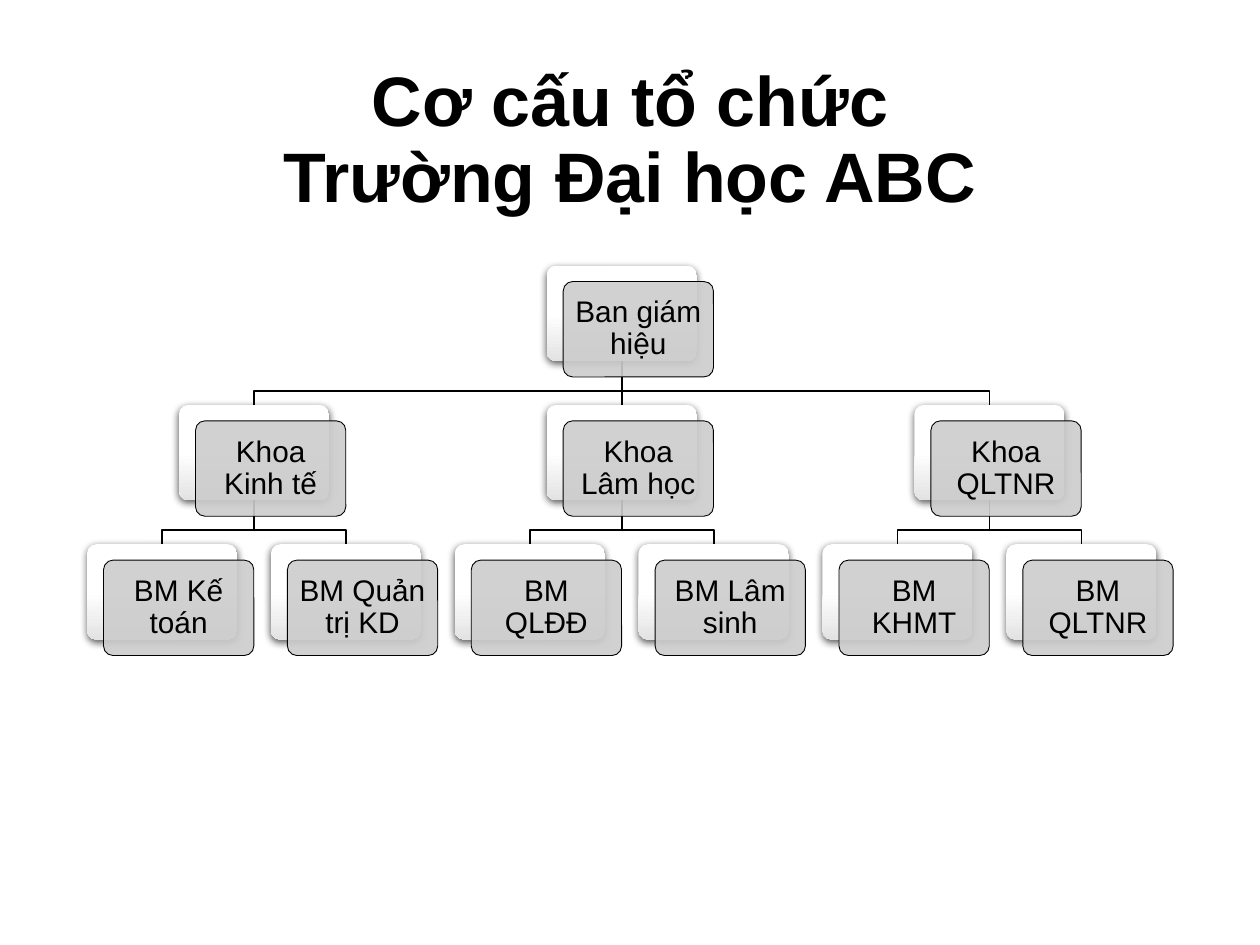
from pptx import Presentation
from pptx import util as u
from pptx.dml import color
from pptx.enum import shapes, text
from pptx.oxml import ns, parse_xml

Pt = u.Pt
CARD_W, CARD_H = 85.9, 54.55
SHIFT_X, SHIFT_Y = 9.5, 9.1
LEFT, TOP = 49.7, 151.8
LEAF_STEP, LEVEL_STEP = 105.06, 79.6
BEND_GAP = 8

BOARD = "Ban giám hiệu"
FACULTIES = {
    "Khoa Kinh tế": ["BM Kế toán", "BM Quản trị KD"],
    "Khoa Lâm học": ["BM QLĐĐ", "BM Lâm sinh"],
    "Khoa QLTNR": ["BM KHMT", "BM QLTNR"],
}


def rgb(value):
    return color.RGBColor.from_string(value)


def apply(target, values):
    for key, value in values.items():
        setattr(target, key, value)


class OrgChart:
    """Draws the title, links and cards of an organisation chart on one slide."""

    ink, card, shade, paper = "000000", "CCCCCC", "E3E3E3", "FFFFFF"
    font = "Arial"
    inset = {f"margin_{side}": Pt(5) for side in ("left", "right", "top", "bottom")}
    frame = {"word_wrap": True, "vertical_anchor": text.MSO_ANCHOR.MIDDLE}
    line_format = {"alignment": text.PP_ALIGN.CENTER, "line_spacing": 0.9}

    def __init__(self, slide):
        self.slide = slide

    def label(self, holder, words, size, bold=False, **margins):
        frame = holder.text_frame
        frame.text = words
        apply(frame, {**self.frame, **margins})
        line = frame.paragraphs[0]
        apply(line, self.line_format)
        for run in line.runs:
            apply(run.font, {"name": self.font, "size": Pt(size), "bold": bold})
            run.font.color.rgb = rgb(self.ink)

    def title(self, words, left, top, width, height):
        heading = self.slide.shapes.title
        apply(heading, {"left": Pt(left), "top": Pt(top),
                        "width": Pt(width), "height": Pt(height)})
        self.label(heading, words, 40, bold=True)
        heading.text_frame.auto_size = text.MSO_AUTO_SIZE.NONE

    def link(self, parent, child):
        (x, top), (end_x, end_y) = parent, child
        start_y, bend = top + CARD_H, end_y - BEND_GAP
        if x == end_x:
            branch = self.slide.shapes.add_connector(
                shapes.MSO_CONNECTOR.STRAIGHT, Pt(x), Pt(start_y), Pt(x), Pt(end_y))
            branch._element.spPr.append(parse_xml(f"<a:effectLst {ns.nsdecls('a')}/>"))
        else:
            route = self.slide.shapes.build_freeform(Pt(x), Pt(start_y))
            corners = [(x, bend), (end_x, bend), (end_x, end_y)]
            route.add_line_segments([(Pt(a), Pt(b)) for a, b in corners], close=False)
            branch = route.convert_to_shape()
            branch.fill.background()
            branch.shadow.inherit = False
        branch.line.color.rgb = rgb(self.ink)
        branch.line.width = Pt(1)

    def panel(self, left, top):
        panel = self.slide.shapes.add_shape(
            shapes.MSO_SHAPE.ROUNDED_RECTANGLE,
            Pt(left), Pt(top), Pt(CARD_W), Pt(CARD_H))
        panel.adjustments[0] = 0.1
        panel.shadow.inherit = False
        return panel

    def back(self, left, top):
        back = self.panel(left, top)
        back.line.fill.background()
        back.fill.gradient()
        back.fill.gradient_angle = 270
        stops = [(0.5, self.paper), (1, self.shade)]
        for stop, (position, tone) in zip(back.fill.gradient_stops, stops):
            stop.position = position
            stop.color.rgb = rgb(tone)
        back._element.spPr.find(ns.qn("a:effectLst")).append(parse_xml(
            f'<a:outerShdw {ns.nsdecls("a")} blurRad="{Pt(4.5)}" dist="{Pt(1.5)}" '
            f'dir="5400000" algn="ctr" rotWithShape="0"><a:srgbClr val="{self.ink}">'
            '<a:alpha val="63000"/></a:srgbClr></a:outerShdw>'))

    def unit(self, words, place):
        centre, top = place
        left = centre - CARD_W / 2
        self.back(left, top)
        front = self.panel(left + SHIFT_X, top + SHIFT_Y)
        front.fill.solid()
        front.fill.fore_color.rgb = rgb(self.card)
        tone = front._element.spPr.find(ns.qn("a:solidFill"))[0]
        tone.append(parse_xml(f'<a:alpha {ns.nsdecls("a")} val="90000"/>'))
        front.line.color.rgb = rgb(self.ink)
        front.line.width = Pt(0.5)
        self.label(front, words, 17, **self.inset)


def main():
    deck = Presentation()
    apply(deck, {"slide_width": Pt(720), "slide_height": Pt(540)})
    chart = OrgChart(deck.slides.add_slide(deck.slide_layouts[5]))
    chart.title("Cơ cấu tổ chức\vTrường Đại học ABC", 49.5, 28.75, 621, 104.4)

    first = LEFT + CARD_W / 2
    levels = [TOP + row * LEVEL_STEP for row in range(3)]
    board = (first + 2.5 * LEAF_STEP, levels[0])
    units, links = [(BOARD, board)], []
    for column, (faculty, departments) in enumerate(FACULTIES.items()):
        faculty_place = (board[0] + (column - 1) * 2 * LEAF_STEP, levels[1])
        units.append((faculty, faculty_place))
        links.append((board, faculty_place))
        for side, department in enumerate(departments):
            place = (faculty_place[0] + (side - 0.5) * LEAF_STEP, levels[2])
            units.append((department, place))
            links.append((faculty_place, place))

    for parent, child in links:
        chart.link(parent, child)
    for words, place in units:
        chart.unit(words, place)
    deck.save("out.pptx")


if __name__ == "__main__":
    main()
